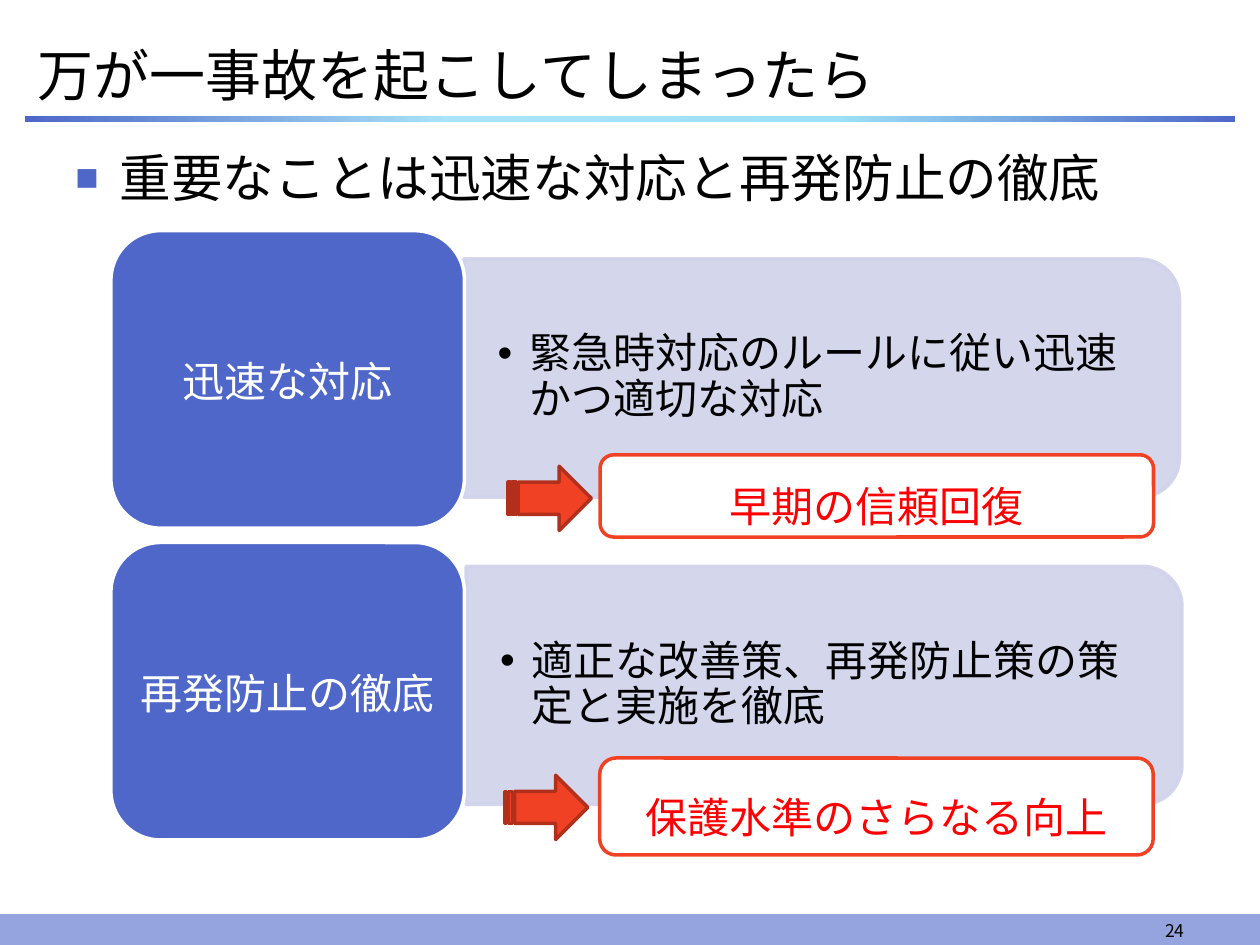
from lxml.etree import SubElement
from pptx import Presentation
from pptx.dml.color import RGBColor
from pptx.enum.shapes import MSO_SHAPE
from pptx.enum.text import MSO_ANCHOR, MSO_AUTO_SIZE, PP_ALIGN
from pptx.oxml import parse_xml
from pptx.oxml.ns import nsdecls, qn
from pptx.util import Pt

BLUE, PALE, RED = "4E67C8", "D0D3EB", "F14124"
STOPS = [(0, BLUE), (35, "A9E3F8"), (67, "9EE0F7"), (100, BLUE)]


def color(value):
    return RGBColor.from_string(value)


def place(shape, box):
    shape.left, shape.top, shape.width, shape.height = map(Pt, box)


class Deck:
    """Holds the style and the current slide, and draws each kind of element."""

    font = "Noto Sans CJK JP"

    def __init__(self):
        self.deck = Presentation()
        self.deck.slide_width, self.deck.slide_height = Pt(720), Pt(540)
        self.slide = self.deck.slides.add_slide(self.deck.slide_layouts[5])

    def set_text(self, shape, text, size, ink="000000", align=PP_ALIGN.LEFT,
                 anchor=MSO_ANCHOR.MIDDLE, pad=(7.2, 3.6, 7.2, 3.6), lead=None):
        frame = shape.text_frame
        frame.word_wrap, frame.auto_size = True, MSO_AUTO_SIZE.NONE
        frame.vertical_anchor = anchor
        (frame.margin_left, frame.margin_top,
         frame.margin_right, frame.margin_bottom) = map(Pt, pad)
        frame.text = text
        para = frame.paragraphs[0]
        para.alignment = align
        if lead:
            para.line_spacing = lead
        font = para.font
        font.size, font.name = Pt(size), self.font
        font.color.rgb = color(ink)
        props = para._p.get_or_add_pPr()
        latin = props.find(qn("a:defRPr")).find(qn("a:latin"))
        latin.addnext(parse_xml(f'<a:ea {nsdecls("a")} typeface="{self.font}"/>'))
        return para

    def title(self, text, box):
        shape = self.slide.shapes.title
        place(shape, box)
        self.set_text(shape, text, 32)

    def label(self, text, box, size, **style):
        shape = self.slide.shapes.add_textbox(*map(Pt, box))
        return self.set_text(shape, text, size, **style)

    def bullet(self, text, box, size, mark, indent, tint=None, scale=100, **style):
        para = self.label(text, box, size, **style)
        props = para._p.get_or_add_pPr()
        props.set("marL", str(Pt(indent)))
        props.set("indent", str(-Pt(indent)))
        parts = [f'<a:buSzPct {nsdecls("a")} val="{scale * 1000}"/>',
                 f'<a:buFont {nsdecls("a")} typeface="Arial"/>',
                 f'<a:buChar {nsdecls("a")} char="{mark}"/>']
        if tint:
            parts.insert(0, f'<a:buClr {nsdecls("a")}><a:srgbClr val="{tint}"/></a:buClr>')
        last = props.find(qn("a:defRPr"))
        for part in parts:
            last.addprevious(parse_xml(part))

    def shape(self, kind, box, fill, line=None, width=2):
        shape = self.slide.shapes.add_shape(kind, *map(Pt, box))
        shape.shadow.inherit = False
        shape.fill.solid()
        shape.fill.fore_color.rgb = color(fill)
        if line:
            shape.line.color.rgb = color(line)
            shape.line.width = Pt(width)
        else:
            shape.line.fill.background()
        return shape

    def band(self, box, stops):
        shape = self.shape(MSO_SHAPE.RECTANGLE, box, BLUE)
        shape.fill.gradient()
        shape.fill.gradient_angle = 0
        group = next(shape._element.spPr.iter(qn("a:gsLst")))
        for old in list(group):
            group.remove(old)
        for spot, tint in stops:
            stop = SubElement(group, qn("a:gs"), pos=str(spot * 1000))
            SubElement(stop, qn("a:srgbClr"), val=tint)

    def panel(self, left, top, width, height):
        box = (left + (width - height) / 2, top + (height - width) / 2, height, width)
        shape = self.shape(MSO_SHAPE.ROUND_2_SAME_RECTANGLE, box, PALE, PALE)
        shape.rotation = 90
        for tint in list(shape._element.spPr.iter(qn("a:srgbClr"))):
            SubElement(tint, qn("a:alpha"), val="90000")

    def card(self, text, box):
        self.shape(MSO_SHAPE.ROUNDED_RECTANGLE, box, BLUE, "FFFFFF")
        left, top, width, height = box
        inner = (left + 8.2, top + 8.2, width - 16.4, height - 16.4)
        self.label(text, inner, 24, ink="FFFFFF", align=PP_ALIGN.CENTER,
                   pad=(7.2, 8.6, 7.2, 3.6), lead=0.9)

    def result(self, text, box):
        shape = self.shape(MSO_SHAPE.FLOWCHART_ALTERNATE_PROCESS, box, "FFFFFF", RED)
        self.set_text(shape, text, 24, ink="FF0000", align=PP_ALIGN.CENTER,
                      pad=(5, 17.3, 5, 5.8))


def main():
    deck = Deck()
    deck.shape(MSO_SHAPE.RECTANGLE, (0, 522.7, 720, 17.3), "95A4DE", "95A4DE", 0.75)
    deck.band((14.1, 66.2, 691.9, 3.6), STOPS)
    deck.title("万が一事故を起こしてしまったら", (14.4, 18.7, 691.9, 46.8))
    deck.bullet("重要なことは迅速な対応と再発防止の徹底", (36, 79.9, 648, 427), 29.5,
                "■", 25.2, BLUE, 75, anchor=MSO_ANCHOR.TOP)
    deck.label("24", (516.2, 519.1, 167.8, 22.3), 10,
               align=PP_ALIGN.RIGHT, anchor=MSO_ANCHOR.BOTTOM)

    rows = [
        ("迅速な対応", 131.8, "緊急時対応のルールに従い迅速かつ適切な対応", 265, 148),
        ("再発防止の徹底", 310, "適正な改善策、再発防止策の策定と実施を徹底", 266.4, 323.6),
    ]
    for name, top, text, left, edge in rows:
        deck.panel(left, edge, 409, 136.1)
        deck.bullet(text, (left, edge + 6.8, 402.4, 122.4), 24, "•", 18,
                    pad=(19.4, 10, 19.4, 10), lead=0.9)
        deck.card(name, (63.4, top, 202, 170))

    deck.result("早期の信頼回復", (342.9, 259.9, 316.3, 47))
    deck.result("保護水準のさらなる向上", (342.7, 433.2, 316.3, 55.4))
    for left, top in ((290.4, 266.4), (288.4, 443)):
        deck.shape(MSO_SHAPE.STRIPED_RIGHT_ARROW, (left, top, 47.5, 36.7), RED, "B2301B")
    deck.deck.save("out.pptx")


if __name__ == "__main__":
    main()
